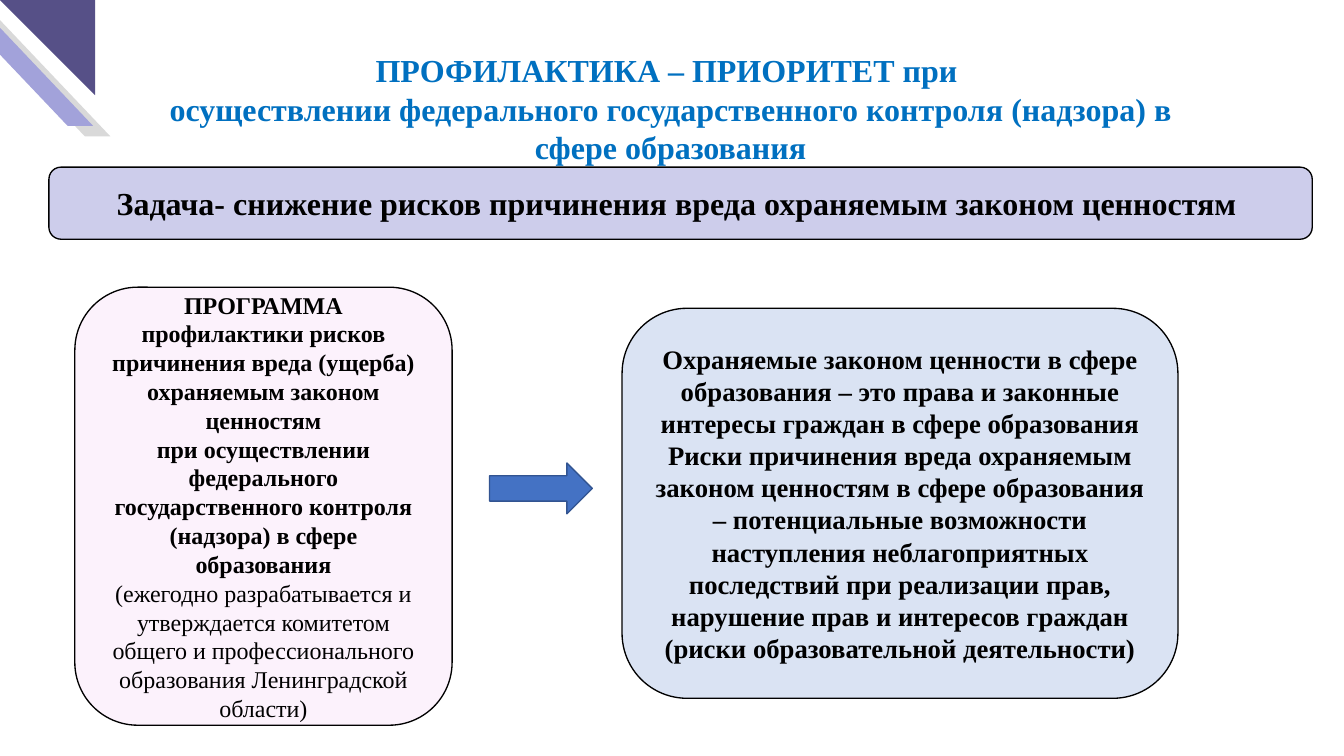
import pptx
import pptx.util
import pptx.dml.color
import pptx.enum.shapes
import pptx.enum.text

Inches = pptx.util.Inches
Kind = pptx.enum.shapes.MSO_SHAPE
Anchor = pptx.enum.text.MSO_ANCHOR
Align = pptx.enum.text.PP_ALIGN


def color(code):
    return pptx.dml.color.RGBColor.from_string(code)


def write(shape, lines, size, ink, plain=()):
    frame = shape.text_frame
    frame.word_wrap = True
    look = {"name": "Times New Roman", "size": pptx.util.Pt(size)}
    for i, line in enumerate(lines):
        para = frame.paragraphs[0] if i == 0 else frame.add_paragraph()
        para.alignment = Align.CENTER
        run = para.add_run()
        run.text = line
        for key, value in {**look, "bold": i not in plain}.items():
            setattr(run.font, key, value)
        run.font.color.rgb = color(ink)


deck = pptx.Presentation()
deck.slide_width = Inches(14)
deck.slide_height = Inches(7.87)
slide = deck.slides.add_slide(deck.slide_layouts[6])
shapes = slide.shapes

corner = [
    (Kind.PARALLELOGRAM, (-0.36, 0.11, 1.51, 1.31), "D9D9D9", ["flipH"]),
    (Kind.PARALLELOGRAM, (-0.54, 0, 1.51, 1.31), "A2A2DA", ["flipH"]),
    (Kind.RIGHT_TRIANGLE, (0, 0, 0.99, 0.99), "565087", ["flipH", "flipV"]),
]
for kind, place, fill, flips in corner:
    part = shapes.add_shape(kind, *map(Inches, place))
    part.shadow.inherit = False
    part.fill.solid()
    part.fill.fore_color.rgb = color(fill)
    part.line.fill.background()
    if kind == Kind.PARALLELOGRAM:
        part.adjustments[0] = 0.95
    for flip in flips:
        part._element.spPr.xfrm.set(flip, "1")

title = shapes.add_textbox(*map(Inches, (1.49, 0.48, 10.99, 2.19)))
write(title, [
    "ПРОФИЛАКТИКА – ПРИОРИТЕТ при ",
    "осуществлении федерального государственного контроля (надзора) в сфере образования",
], 24, "0070C0")

task = ["Задача- снижение рисков причинения вреда охраняемым законом ценностям "]
plan = [
    "ПРОГРАММА",
    "профилактики рисков причинения вреда (ущерба)",
    "охраняемым законом ценностям",
    "при осуществлении федерального государственного контроля (надзора) в сфере образования",
    "(ежегодно разрабатывается и утверждается комитетом общего и профессионального образования Ленинградской области)",
]
values = [
    "Охраняемые законом ценности в сфере образования – это права и законные интересы граждан в сфере образования",
    "Риски причинения вреда охраняемым законом ценностям в сфере образования – потенциальные возможности наступления неблагоприятных последствий при реализации прав, нарушение прав и интересов граждан",
    "(риски образовательной деятельности)",
]
cards = [
    (Kind.ROUNDED_RECTANGLE, (0.51, 1.74, 13.16, 0.75), "CDCDEB", "000000", task, 24, ()),
    (Kind.ROUNDED_RECTANGLE, (0.78, 2.99, 3.93, 4.56), "FCF2FC", "000000", plan, 18, (4,)),
    (Kind.ROUNDED_RECTANGLE, (6.48, 3.21, 5.79, 4.06), "DAE3F3", "000000", values, 20, ()),
    (Kind.RIGHT_ARROW, (5.1, 4.82, 1.07, 0.53), "4472C4", "325491", [], 18, ()),
]
for kind, place, fill, edge, lines, size, plain in cards:
    card = shapes.add_shape(kind, *map(Inches, place))
    card.shadow.inherit = False
    card.fill.solid()
    card.fill.fore_color.rgb = color(fill)
    card.line.color.rgb = color(edge)
    card.line.width = pptx.util.Pt(1)
    card.text_frame.vertical_anchor = Anchor.MIDDLE
    write(card, lines, size, "000000", plain)

deck.save("out.pptx")
